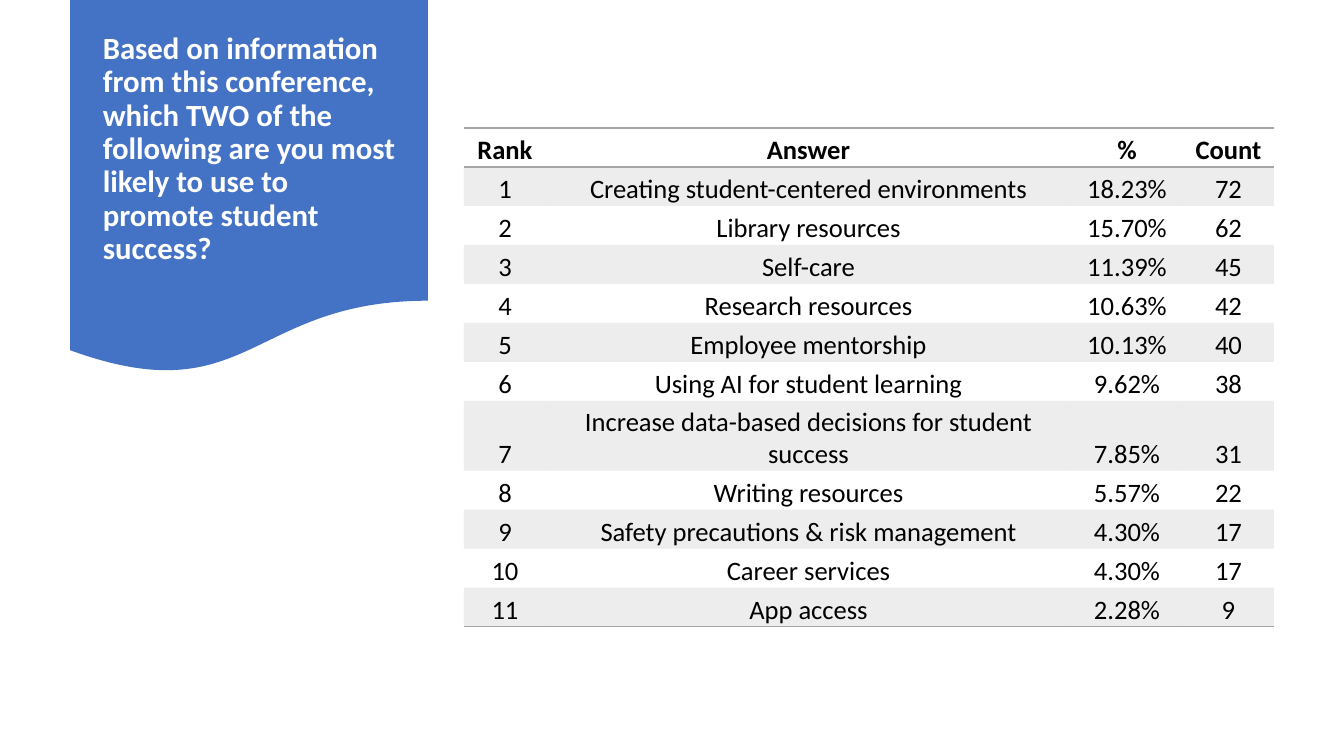
from lxml.etree import SubElement
from pptx import Presentation
from pptx.dml.color import RGBColor
from pptx.enum.shapes import MSO_SHAPE as Shape
from pptx.enum.text import MSO_ANCHOR as Anchor, PP_ALIGN as Align
from pptx.oxml.ns import qn
from pptx.util import Pt

EMU_PER_PX = 914400 / 100.8
PLAIN_TABLE_STYLE = "{2D5ABB26-0587-4C30-8999-92F81FD0307C}"
BLUE, GRAY, WHITE, BLACK = "4472C4", "A5A5A5", "FFFFFF", "000000"

QUESTION = (
    "Based on information from this conference, which TWO of the following "
    "are you most likely to use to promote student success?"
)
HEADINGS = ("Rank", "Answer", "%", "Count")
ANSWERS = (
    ("Creating student-centered environments", "18.23%", 72),
    ("Library resources", "15.70%", 62),
    ("Self-care", "11.39%", 45),
    ("Research resources", "10.63%", 42),
    ("Employee mentorship", "10.13%", 40),
    ("Using AI for student learning", "9.62%", 38),
    ("Increase data-based decisions for student success", "7.85%", 31),
    ("Writing resources", "5.57%", 22),
    ("Safety precautions & risk management", "4.30%", 17),
    ("Career services", "4.30%", 17),
    ("App access", "2.28%", 9),
)
COLUMN_WIDTHS = (82, 525, 112, 91)
ROW_HEIGHT, TALL_ROW_HEIGHT, TALL_RANK = 39, 70, 7


def px(*lengths):
    return [round(length * EMU_PER_PX) for length in lengths]


def color(value):
    return RGBColor.from_string(value)


class SurveySlide:
    """Draws the survey's elements on one slide in a shared style."""

    font_name = "Calibri"

    def __init__(self, slide):
        self.slide = slide

    def style(self, paragraph, size, ink, bold):
        font = paragraph.font
        font.name, font.size, font.bold = self.font_name, Pt(size), bold
        font.color.rgb = color(ink)

    def banner(self, left, top, width, height):
        banner = self.slide.shapes.add_shape(
            Shape.FLOWCHART_DOCUMENT, *px(left, top, width, height))
        banner.shadow.inherit = False
        banner.fill.solid()
        banner.fill.fore_color.rgb = color(BLUE)
        banner.line.fill.background()

    def question(self, text, left, top, width, height):
        frame = self.slide.shapes.add_textbox(*px(left, top, width, height)).text_frame
        frame.word_wrap = True
        frame.vertical_anchor = Anchor.MIDDLE
        paragraph = frame.paragraphs[0]
        paragraph.text = text
        paragraph.line_spacing = 0.9
        self.style(paragraph, 22, WHITE, True)

    def ranking(self, rows, heights, widths, left, top):
        table = self.slide.shapes.add_table(
            len(rows), len(widths), *px(left, top, sum(widths), sum(heights))).table
        table.first_row = table.horz_banding = False
        table._tbl.tblPr.find(qn("a:tableStyleId")).text = PLAIN_TABLE_STYLE
        for column, width in zip(table.columns, px(*widths)):
            column.width = width
        for rank, (row, height) in enumerate(zip(table.rows, px(*heights))):
            row.height = height
            edges = {0: ("a:lnT", "a:lnB"), len(rows) - 1: ("a:lnB",)}.get(rank, ())
            for cell, value in zip(row.cells, rows[rank]):
                self.cell(cell, str(value), rank == 0, rank % 2 == 1, edges)

    def cell(self, cell, text, heading, shaded, edges):
        cell.vertical_anchor = Anchor.BOTTOM
        cell.margin_left, cell.margin_top, cell.margin_right, cell.margin_bottom = px(2, 2, 2, 0)
        paragraph = cell.text_frame.paragraphs[0]
        paragraph.text = text
        paragraph.alignment = Align.CENTER
        self.style(paragraph, 19, BLACK, heading)
        properties = cell._tc.get_or_add_tcPr()
        for edge in edges:
            border = SubElement(properties, qn(edge), w=str(Pt(1)))
            paint = SubElement(border, qn("a:solidFill"))
            SubElement(paint, qn("a:srgbClr"), val=GRAY)
        if shaded:
            cell.fill.solid()
            cell.fill.fore_color.rgb = color(GRAY)
            shade = properties.find(qn("a:solidFill"))[0]
            SubElement(shade, qn("a:alpha"), val="20000")
        else:
            cell.fill.background()


def main():
    deck = Presentation()
    deck.slide_width, deck.slide_height = px(1344, 756)
    survey = SurveySlide(deck.slides.add_slide(deck.slide_layouts[6]))
    survey.banner(70, 0, 358, 375)
    survey.question(QUESTION, 93, 19, 314, 261)
    rows = [HEADINGS] + [(rank, *answer) for rank, answer in enumerate(ANSWERS, 1)]
    heights = [TALL_ROW_HEIGHT if rank == TALL_RANK else ROW_HEIGHT
               for rank in range(len(rows))]
    survey.ranking(rows, heights, COLUMN_WIDTHS, 464, 128)
    deck.save("out.pptx")


if __name__ == "__main__":
    main()
